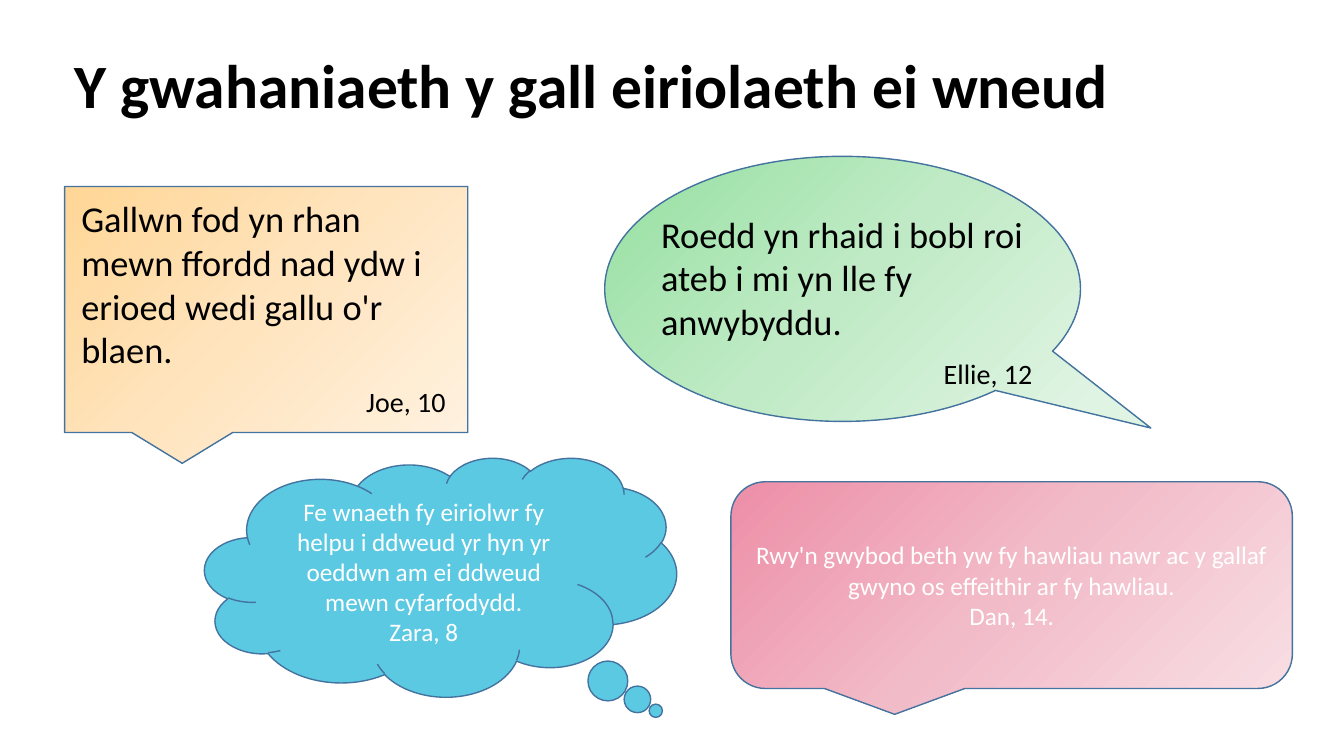
from copy import deepcopy
from dataclasses import dataclass

from pptx import Presentation
from pptx.dml.color import RGBColor
from pptx.enum.shapes import MSO_SHAPE
from pptx.enum.text import MSO_ANCHOR, PP_ALIGN
from pptx.oxml.ns import qn
from pptx.util import Cm, Pt

LEFT, CENTER, RIGHT = PP_ALIGN.LEFT, PP_ALIGN.CENTER, PP_ALIGN.RIGHT
TOP, MIDDLE = MSO_ANCHOR.TOP, MSO_ANCHOR.MIDDLE
RECTANGLE = MSO_SHAPE.RECTANGULAR_CALLOUT
ELLIPSE = MSO_SHAPE.OVAL_CALLOUT
CLOUD = MSO_SHAPE.CLOUD_CALLOUT
ROUNDED = MSO_SHAPE.ROUNDED_RECTANGULAR_CALLOUT


@dataclass(frozen=True)
class Theme:
    font: str = "Calibri"
    title_size: int = 44
    quote_size: int = 26
    speaker_size: int = 20
    callout_size: int = 18
    speaker_gap: float = 9.6
    black: str = "000000"
    white: str = "FFFFFF"
    outline: str = "43739E"
    orange: tuple = ("FFD696", "FFE4BE", "FFF1DF")
    green: tuple = ("95E0A0", "BFEAC5", "E0F4E3")
    blue: tuple = ("5CC9E3",)
    pink: tuple = ("ED8EA7", "F2BBC8", "F8DEE4")


class SlideBuilder:
    def __init__(self, slide, theme):
        self.slide = slide
        self.theme = theme

    def add_paragraph(self, frame, text, size, color, align=LEFT, bold=False):
        """Fill the frame's empty first paragraph, or append another one."""
        paragraph = frame.paragraphs[0]
        if paragraph.runs:
            paragraph = frame.add_paragraph()
        paragraph.alignment = align
        run = paragraph.add_run()
        run.text = text
        run.font.name = self.theme.font
        run.font.size = Pt(size)
        run.font.bold = bold
        run.font.color.rgb = RGBColor.from_string(color)
        return paragraph

    def text_box(self, box, anchor=TOP):
        frame = self.slide.shapes.add_textbox(*map(Cm, box)).text_frame
        frame.word_wrap = True
        frame.vertical_anchor = anchor
        return frame

    def title(self, box, text):
        frame = self.text_box(box, MIDDLE)
        paragraph = self.add_paragraph(
            frame, text, self.theme.title_size, self.theme.black, bold=True)
        paragraph.line_spacing = 0.9

    def quote(self, box, text, speaker):
        theme = self.theme
        frame = self.text_box(box)
        self.add_paragraph(frame, text, theme.quote_size, theme.black)
        signature = self.add_paragraph(
            frame, speaker, theme.speaker_size, theme.black, RIGHT)
        signature.space_before = Pt(theme.speaker_gap)

    def fill(self, shape, colors):
        """Use one colour as a solid, several as an evenly spaced diagonal gradient."""
        if len(colors) == 1:
            shape.fill.solid()
            shape.fill.fore_color.rgb = RGBColor.from_string(colors[0])
            return
        shape.fill.gradient()
        shape.fill.gradient_angle = 315
        stop_list = next(shape.element.iter(qn("a:gsLst")))
        while len(stop_list) < len(colors):
            stop_list.append(deepcopy(stop_list[0]))
        for index, stop in enumerate(shape.fill.gradient_stops):
            stop.position = index / (len(colors) - 1)
            stop.color.rgb = RGBColor.from_string(colors[index])

    def callout(self, kind, box, colors, tail=None, lines=()):
        """Draw a speech shape; tail is the tip's offset from its centre."""
        theme = self.theme
        shape = self.slide.shapes.add_shape(kind, *map(Cm, box))
        shape.shadow.inherit = False
        for index, offset in enumerate(tail or ()):
            shape.adjustments[index] = offset
        self.fill(shape, colors)
        shape.line.color.rgb = RGBColor.from_string(theme.outline)
        shape.line.width = Pt(1)
        frame = shape.text_frame
        frame.word_wrap = True
        frame.vertical_anchor = MIDDLE
        for line in lines:
            self.add_paragraph(frame, line, theme.callout_size, theme.white, CENTER)


def main():
    presentation = Presentation()
    presentation.slide_width = Cm(33.87)
    presentation.slide_height = Cm(19.05)
    slide = presentation.slides.add_slide(presentation.slide_layouts[6])
    theme = Theme()
    builder = SlideBuilder(slide, theme)

    builder.title((1.63, 0.38, 28.17, 3.68), "Y gwahaniaeth y gall eiriolaeth ei wneud")
    builder.callout(RECTANGLE, (1.63, 4.7, 10.16, 6.2), theme.orange)
    builder.callout(ELLIPSE, (15.24, 3.94, 11.99, 6.68), theme.green, (0.648, 0.525))
    builder.callout(
        CLOUD, (5.16, 11.53, 11.89, 6.02), theme.blue, (0.456, 0.56),
        ("Fe wnaeth fy eiriolwr fy helpu i ddweud yr hyn yr oeddwn am ei ddweud "
         "mewn cyfarfodydd.", "Zara, 8"))
    builder.callout(
        ROUNDED, (18.42, 12.14, 14.15, 5.21), theme.pink,
        lines=("Rwy'n gwybod beth yw fy hawliau nawr ac y gallaf gwyno os "
               "effeithir ar fy hawliau.", "Dan, 14."))
    builder.quote(
        (1.8, 4.83, 9.68, 5.89),
        "Gallwn fod yn rhan mewn ffordd nad ydw i erioed wedi gallu o'r blaen.",
        "Joe, 10")
    builder.quote(
        (16.41, 5.21, 9.86, 4.78),
        "Roedd yn rhaid i bobl roi ateb i mi yn lle fy anwybyddu.",
        "Ellie, 12")

    presentation.save("out.pptx")


if __name__ == "__main__":
    main()
